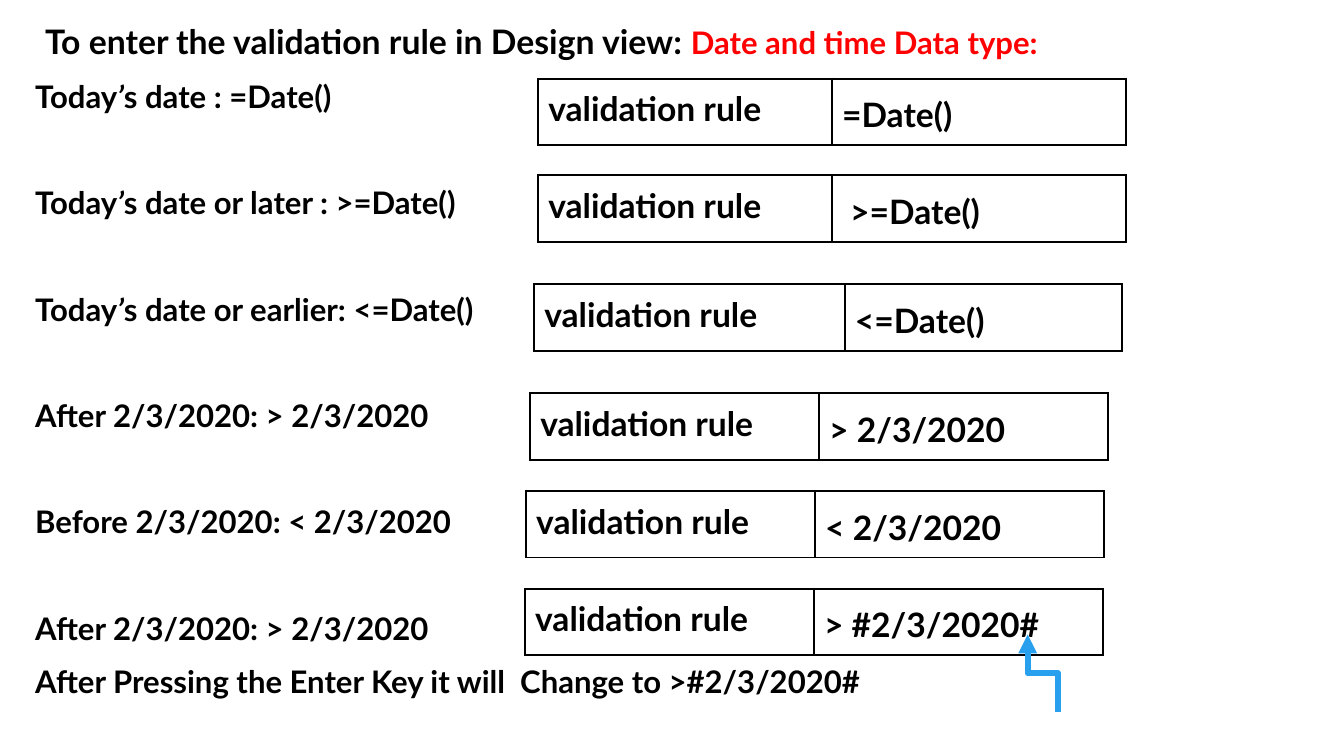
from dataclasses import dataclass

from lxml.etree import SubElement
from pptx import Presentation
from pptx.dml.color import RGBColor
from pptx.enum.shapes import MSO_CONNECTOR
from pptx.enum.text import MSO_ANCHOR, MSO_AUTO_SIZE, PP_ALIGN
from pptx.oxml.ns import qn
from pptx.slide import Slide
from pptx.table import _Cell
from pptx.text.text import TextFrame, _Paragraph
from pptx.util import Emu, Inches, Pt

SLIDE_W, SLIDE_H = Inches(13.33), Inches(7.5)


@dataclass(frozen=True)
class Theme:
    font: str = "Lato"
    ink: RGBColor = RGBColor(0, 0, 0)
    accent: RGBColor = RGBColor(0xFF, 0, 0)
    arrow: RGBColor = RGBColor(0x29, 0xA0, 0xED)
    paper: RGBColor = RGBColor(0xFF, 0xFF, 0xFF)
    heading: float = 24.1
    body: float = 22.2
    cell: float = 24
    border: float = 1.5
    arrow_width: float = 4.5
    leading: float = 1.05
    cell_leading: float = 1.15


@dataclass(frozen=True)
class Statement:
    text: str
    gap: float = 48


@dataclass(frozen=True)
class Rule:
    """A label and its expression; lengths are percent of the slide."""
    expression: str
    left: float
    top: float
    label_width: float = 21.5
    expression_width: float = 21.5


THEME = Theme()
ROW_HEIGHT = 8.8

STATEMENTS = [
    Statement("Today’s date : =Date()", 0),
    Statement("Today’s date or later : >=Date()"),
    Statement("Today’s date or earlier: <=Date()"),
    Statement("After 2/3/2020: > 2/3/2020"),
    Statement("Before 2/3/2020: < 2/3/2020"),
    Statement("After 2/3/2020: > 2/3/2020"),
    Statement("After Pressing the Enter Key it will  Change to >#2/3/2020#", 10),
]

RULES = [
    Rule("=Date()", 40.05, 10.4, 21.85, 21.85),
    Rule(" >=Date()", 40.05, 23.2, 21.85, 21.85),
    Rule("<=Date()", 39.75, 37.6, 23.1, 20.65),
    Rule("> 2/3/2020", 39.45, 52),
    Rule("< 2/3/2020", 39.15, 64.93),
    Rule("> #2/3/2020#", 39.07, 77.87),
]


def across(percent: float) -> Emu:
    return Emu(round(SLIDE_W * percent / 100))


def down(percent: float) -> Emu:
    return Emu(round(SLIDE_H * percent / 100))


def add_text(paragraph: _Paragraph, text: str, size: float,
             color: RGBColor = THEME.ink, italic: bool = False) -> None:
    run = paragraph.add_run()
    run.text = text
    run.font.name = THEME.font
    run.font.size = Pt(size)
    run.font.bold = True
    run.font.italic = italic
    run.font.color.rgb = color


def prepare_frame(frame: TextFrame) -> None:
    frame.word_wrap = True
    frame.auto_size = MSO_AUTO_SIZE.NONE
    frame.vertical_anchor = MSO_ANCHOR.TOP


def add_heading(slide: Slide) -> None:
    heading = slide.shapes.title
    heading.left, heading.top = across(2.6), down(1.87)
    heading.width, heading.height = across(90), down(7)
    prepare_frame(heading.text_frame)
    line = heading.text_frame.paragraphs[0]
    line.alignment = PP_ALIGN.LEFT
    line.line_spacing = THEME.leading
    add_text(line, "To enter the validation rule in Design view: ", THEME.heading)
    add_text(line, "Date and time Data type:", THEME.body, THEME.accent)


def add_statements(slide: Slide) -> None:
    column = slide.shapes.add_textbox(across(1.88), down(9.33), across(66), down(86))
    frame = column.text_frame
    prepare_frame(frame)
    for index, statement in enumerate(STATEMENTS):
        line = frame.add_paragraph() if index else frame.paragraphs[0]
        line.line_spacing = THEME.leading
        if index:
            line.space_before = Pt(statement.gap)
        before, apostrophe, after = statement.text.partition("’")
        add_text(line, before, THEME.body)
        if apostrophe:
            add_text(line, apostrophe, THEME.body, italic=True)
            add_text(line, after, THEME.body)


def add_borders(cell: _Cell) -> None:
    properties = cell._tc.get_or_add_tcPr()
    for position, side in enumerate(("lnL", "lnR", "lnT", "lnB")):
        edge = SubElement(properties, qn(f"a:{side}"), w=str(Pt(THEME.border)))
        fill = SubElement(edge, qn("a:solidFill"))
        SubElement(fill, qn("a:srgbClr"), val=str(THEME.ink))
        properties.insert(position, edge)


def add_rule(slide: Slide, rule: Rule) -> None:
    widths = across(rule.label_width), across(rule.expression_width)
    table = slide.shapes.add_table(1, 2, across(rule.left), down(rule.top),
                                   sum(widths), down(ROW_HEIGHT)).table
    table.first_row = table.horz_banding = False
    texts = "validation rule", rule.expression
    spacings = 1.0, THEME.cell_leading
    for index, (width, text, spacing) in enumerate(zip(widths, texts, spacings)):
        table.columns[index].width = width
        cell = table.cell(0, index)
        cell.fill.background()
        cell.margin_left = cell.margin_right = Inches(0.1)
        cell.margin_top = cell.margin_bottom = Inches(0.1)
        add_borders(cell)
        line = cell.text_frame.paragraphs[0]
        line.line_spacing = spacing
        add_text(line, text, THEME.cell)


def add_change_arrow(slide: Slide) -> None:
    arrow = slide.shapes.add_connector(MSO_CONNECTOR.ELBOW, across(74.7), down(91.07),
                                       across(80.48), down(87.07))
    arrow.line.color.rgb = THEME.arrow
    arrow.line.width = Pt(THEME.arrow_width)
    properties = arrow._element.spPr
    # A quarter turn makes the elbow leave and arrive vertically
    properties.find(qn("a:xfrm")).set("rot", str(270 * 60000))
    SubElement(properties.find(qn("a:ln")), qn("a:tailEnd"), type="triangle")
    SubElement(properties, qn("a:effectLst"))


def main() -> None:
    deck = Presentation()
    deck.slide_width, deck.slide_height = SLIDE_W, SLIDE_H
    slide = deck.slides.add_slide(deck.slide_layouts.get_by_name("Title Only"))
    slide.background.fill.solid()
    slide.background.fill.fore_color.rgb = THEME.paper

    # Heading and the list of statements
    add_heading(slide)
    add_statements(slide)

    # Validation rule tables
    for rule in RULES:
        add_rule(slide, rule)

    # Arrow to the changed expression
    add_change_arrow(slide)
    deck.save("out.pptx")


if __name__ == "__main__":
    main()
